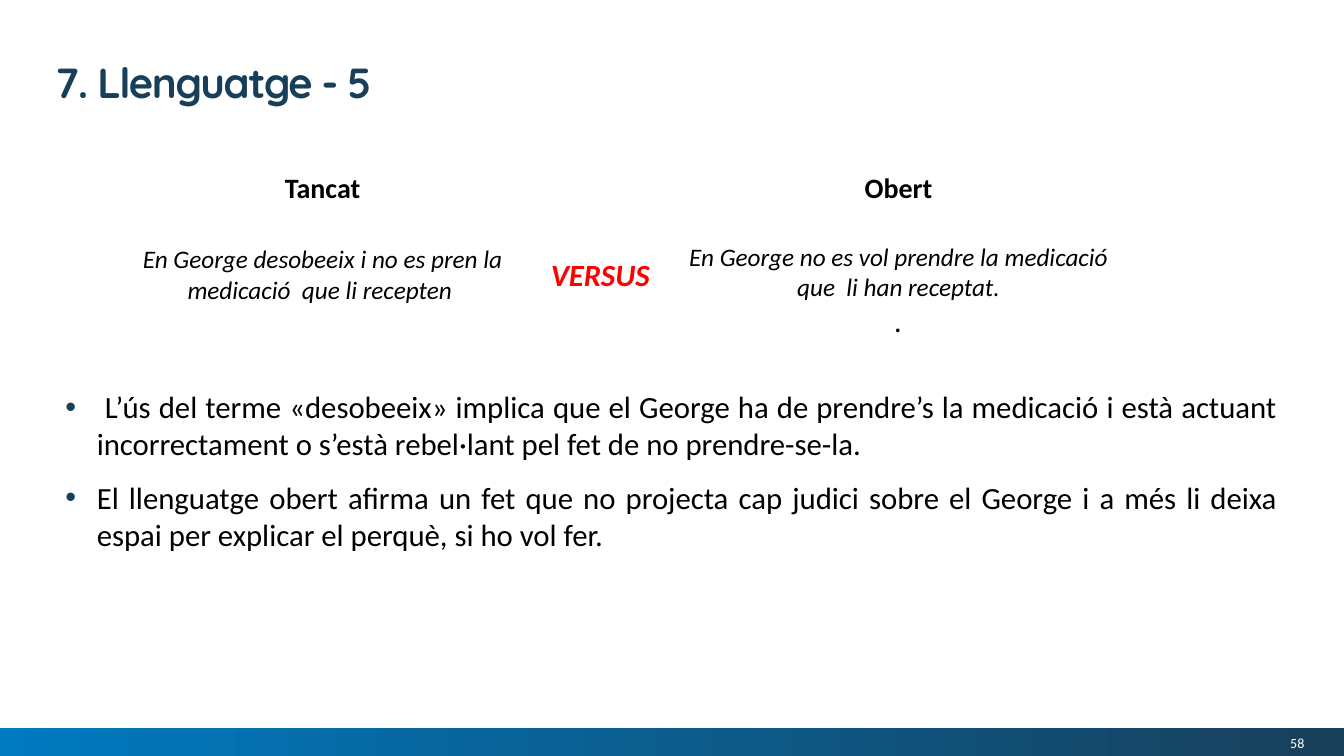
"""Build the slide comparing closed and open language."""
from typing import NamedTuple

from lxml.etree import SubElement
from pptx import Presentation
from pptx.dml.color import RGBColor
from pptx.enum.shapes import MSO_SHAPE
from pptx.enum.text import MSO_ANCHOR, MSO_AUTO_SIZE, PP_ALIGN
from pptx.oxml.ns import qn
from pptx.util import Cm, Pt

NAVY, BLUE, BLACK, RED, WHITE = "183F5A", "007AC0", "000000", "FF0000", "FFFFFF"


class Line(NamedTuple):
    text: str
    size: float = 18
    bold: bool = False
    italic: bool = False
    color: str = BLACK


class Cell(NamedTuple):
    row: int
    column: int
    lines: list[Line]
    top: float = 0


CELLS = [
    Cell(0, 0, [Line("Tancat", 20, bold=True)]),
    Cell(0, 2, [Line("Obert", 20, bold=True)]),
    Cell(1, 0, [Line("En George desobeeix i no es pren la medicació  que li recepten ", italic=True)]),
    Cell(1, 1, [Line("VERSUS", 22, bold=True, italic=True, color=RED)]),
    Cell(1, 2, [Line("En George no es vol prendre la medicació que  li han receptat.", italic=True),
                Line(".", 22, italic=True)], top=0.77),
]
BULLETS = [
    " L’ús del terme «desobeeix» implica que el George ha de prendre’s la medicació i està actuant "
    "incorrectament o s’està rebel·lant pel fet de no prendre-se-la.",
    "El llenguatge obert afirma un fet que no projecta cap judici sobre el George i a més li deixa "
    "espai per explicar el perquè, si ho vol fer.",
]


def rgb(color: str) -> RGBColor:
    return RGBColor.from_string(color)


def write(paragraph, text: str, *, size: float, color: str = BLACK, font: str = "Calibri",
          bold: bool = False, italic: bool = False, align=PP_ALIGN.LEFT):
    paragraph.alignment = align
    run = paragraph.add_run()
    run.text = text
    run.font.name, run.font.size = font, Pt(size)
    run.font.bold, run.font.italic = bold, italic
    run.font.color.rgb = rgb(color)
    return run


def paragraphs(frame, count: int) -> list:
    return [frame.paragraphs[0]] + [frame.add_paragraph() for _ in range(count - 1)]


def add_bullet(paragraph, color: str) -> None:
    properties = paragraph._p.get_or_add_pPr()
    properties.set("marL", str(Cm(0.79)))
    properties.set("indent", str(-Cm(0.79)))
    bullet_color = SubElement(properties, qn("a:buClr"))
    SubElement(bullet_color, qn("a:srgbClr"), val=color)
    SubElement(properties, qn("a:buFont"), typeface="Arial")
    SubElement(properties, qn("a:buChar"), char="•")


def add_footer(slide) -> None:
    bar = slide.shapes.add_shape(MSO_SHAPE.RECTANGLE, 0, Cm(18.34), Cm(33.87), Cm(0.71))
    bar.shadow.inherit = False
    bar.line.fill.background()
    bar.fill.gradient()
    bar.fill.gradient_angle = 0
    for stop, position, color in zip(bar.fill.gradient_stops, (0, 1), (BLUE, NAVY)):
        stop.position, stop.color.rgb = position, rgb(color)
    frame = slide.shapes.add_textbox(Cm(28.3), Cm(18.42), Cm(4.57), Cm(0.61)).text_frame
    frame.word_wrap = True
    frame.vertical_anchor = MSO_ANCHOR.MIDDLE
    frame.margin_left = frame.margin_right = frame.margin_top = frame.margin_bottom = 0
    write(frame.paragraphs[0], "58", size=10, color=WHITE, align=PP_ALIGN.RIGHT)


def format_title(title) -> None:
    title.left, title.top, title.width, title.height = Cm(1.14), Cm(1.4), Cm(27.2), Cm(1.19)
    frame = title.text_frame
    frame.auto_size = MSO_AUTO_SIZE.NONE
    frame.vertical_anchor = MSO_ANCHOR.TOP
    paragraph = frame.paragraphs[0]
    paragraph.line_spacing = Pt(33)
    run = write(paragraph, "7. Llenguatge - 5", size=30, color=NAVY, font="Quicksand", bold=True)
    run.font._element.set("spc", "-100")


def add_comparison(slide) -> None:
    widths, heights = (10.46, 3.53, 11.51), (1.14, 3.12)
    table = slide.shapes.add_table(len(heights), len(widths), Cm(2.9), Cm(4.19),
                                   Cm(sum(widths)), Cm(sum(heights))).table
    table.first_row = table.horz_banding = False
    for column, width in zip(table.columns, widths):
        column.width = Cm(width)
    for row, height in zip(table.rows, heights):
        row.height = Cm(height)
    for cell in table.iter_cells():
        cell.fill.background()
        cell.vertical_anchor = MSO_ANCHOR.MIDDLE
        cell.margin_left = cell.margin_right = Cm(0.18)
        cell.margin_top = cell.margin_bottom = 0
    for entry in CELLS:
        cell = table.cell(entry.row, entry.column)
        cell.margin_top = Cm(entry.top)
        for paragraph, line in zip(paragraphs(cell.text_frame, len(entry.lines)), entry.lines):
            write(paragraph, align=PP_ALIGN.CENTER, **line._asdict())


def add_explanation(slide) -> None:
    frame = slide.shapes.add_textbox(Cm(1.4), Cm(9.65), Cm(31.04), Cm(4.6)).text_frame
    frame.word_wrap = True
    for paragraph, text in zip(paragraphs(frame, len(BULLETS)), BULLETS):
        paragraph.space_after = Pt(12)
        add_bullet(paragraph, NAVY)
        write(paragraph, text, size=22, align=PP_ALIGN.JUSTIFY)


def main() -> None:
    presentation = Presentation()
    presentation.slide_width, presentation.slide_height = Cm(33.87), Cm(19.05)
    slide = presentation.slides.add_slide(presentation.slide_layouts.get_by_name("Title Only"))
    add_footer(slide)
    format_title(slide.shapes.title)
    add_comparison(slide)
    add_explanation(slide)
    presentation.save("out.pptx")


if __name__ == "__main__":
    main()
